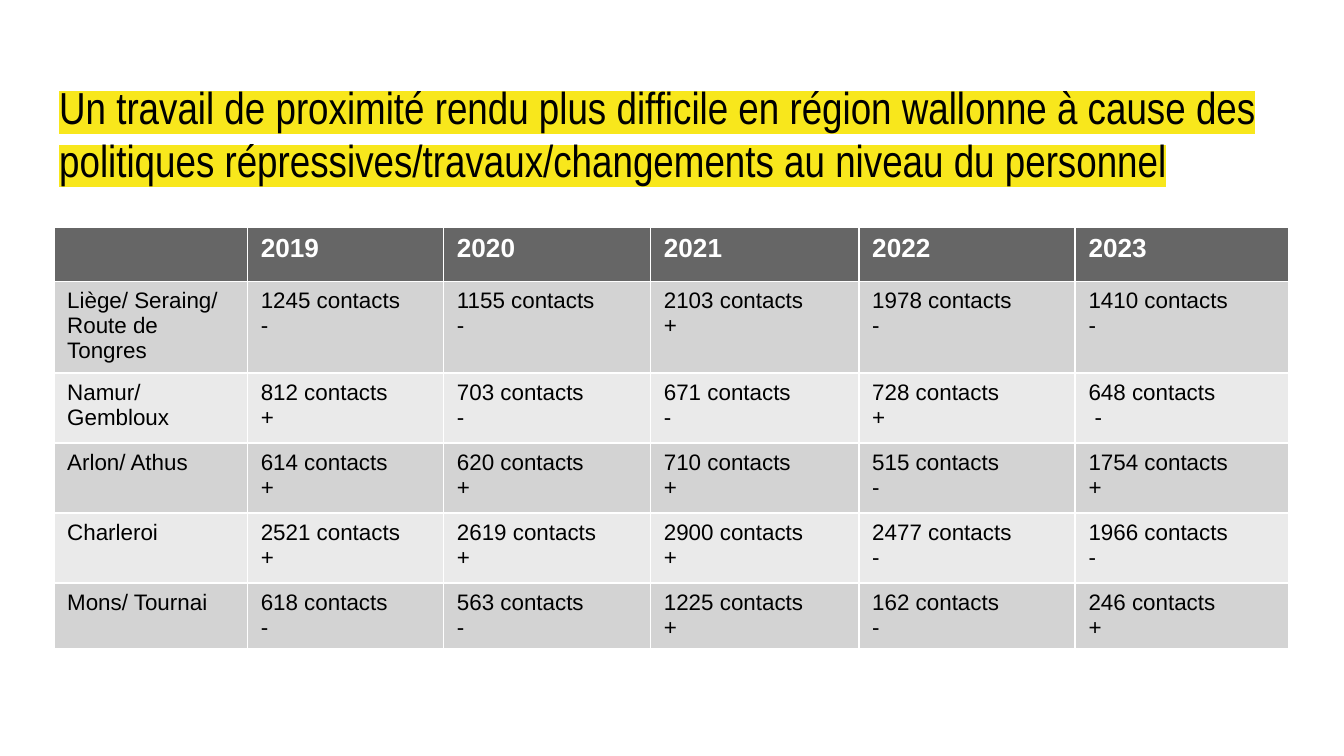
from lxml import etree
from pptx import Presentation
from pptx.dml.color import RGBColor
from pptx.enum.text import MSO_ANCHOR, MSO_AUTO_SIZE, PP_ALIGN
from pptx.oxml.ns import qn
from pptx.util import Pt

TOP = MSO_ANCHOR.TOP
NO_FIT = MSO_AUTO_SIZE.NONE
LEFT = PP_ALIGN.LEFT

TITLE = ("Un travail de proximité rendu plus difficile en région wallonne à cause des "
         "politiques répressives/travaux/changements au niveau du personnel")
YEARS = ["", "2019", "2020", "2021", "2022", "2023"]
CONTACTS = [
    ("Liège/ Seraing/\nRoute de\nTongres",
     [(1245, "-"), (1155, "-"), (2103, "+"), (1978, "-"), (1410, "-")]),
    ("Namur/\nGembloux",
     [(812, "+"), (703, "-"), (671, "-"), (728, "+"), (648, " -")]),
    ("Arlon/ Athus",
     [(614, "+"), (620, "+"), (710, "+"), (515, "-"), (1754, "+")]),
    ("Charleroi",
     [(2521, "+"), (2619, "+"), (2900, "+"), (2477, "-"), (1966, "-")]),
    ("Mons/ Tournai",
     [(618, "-"), (563, "-"), (1225, "+"), (162, "-"), (246, "+")]),
]
COL_WIDTHS = [103.7, 105.1, 110.9, 111.6, 115.9, 114.5]
ROW_HEIGHTS = [23.5, 49, 37.5, 37.5, 37.5, 35.3]
HEADER_FILL = "666666"
BAND_FILLS = ["D3D3D3", "EAEAEA"]


def rgb(value):
    """Turn a hex string into a colour."""
    return RGBColor.from_string(value)


def add_highlight(r, color):
    """Mark a run with a highlight colour."""
    highlight = etree.Element(qn("a:highlight"))
    etree.SubElement(highlight, qn("a:srgbClr"), val=color)
    r.font.fill._xPr.find(qn("a:solidFill")).addnext(highlight)


def write(tf, text, size=12, font="Arial", color="000000", bold=False, highlight=None):
    """Write each line of the text as a formatted paragraph."""
    for i, line in enumerate(text.split("\n")):
        p = tf.add_paragraph() if i else tf.paragraphs[0]
        p.alignment = LEFT
        p.line_spacing = 1.0
        p.space_before = Pt(0)
        r = p.add_run()
        r.text = line
        r.font.size = Pt(size)
        r.font.name = font
        r.font.bold = bold
        r.font.color.rgb = rgb(color)
        if highlight:
            add_highlight(r, highlight)


def format_title(sp):
    """Place the title and fill it with highlighted text."""
    sp.left, sp.top, sp.width, sp.height = Pt(24.5), Pt(35.3), Pt(671), Pt(59.8)
    tf = sp.text_frame
    tf.word_wrap = True
    tf.auto_size = NO_FIT
    tf.vertical_anchor = TOP
    tf.margin_left = tf.margin_top = tf.margin_right = tf.margin_bottom = Pt(7.2)
    write(tf, TITLE, size=24, font="Arial Narrow", highlight="F8E71C")


def fill_row(row, texts, fill, **text_format):
    """Fill one table row with texts on a plain colour."""
    for cell, text in zip(row.cells, texts):
        cell.fill.solid()
        cell.fill.fore_color.rgb = rgb(fill)
        if text:
            write(cell.text_frame, text, **text_format)


def add_contacts_table(s):
    """Add the table of contacts by place and year."""
    table = s.shapes.add_table(len(ROW_HEIGHTS), len(COL_WIDTHS), Pt(28.8), Pt(121.7),
                               Pt(sum(COL_WIDTHS)), Pt(sum(ROW_HEIGHTS))).table
    for column, width in zip(table.columns, COL_WIDTHS):
        column.width = Pt(width)
    for row, height in zip(table.rows, ROW_HEIGHTS):
        row.height = Pt(height)
    fill_row(table.rows[0], YEARS, HEADER_FILL, size=14, color="FFFFFF", bold=True)
    for i, (place, counts) in enumerate(CONTACTS):
        texts = [place] + [f"{count} contacts\n{trend}" for count, trend in counts]
        fill_row(table.rows[i + 1], texts, BAND_FILLS[i % 2])


def main():
    """Build and save the slide."""
    prs = Presentation()
    prs.slide_width, prs.slide_height = Pt(720), Pt(405)
    s = prs.slides.add_slide(prs.slide_layouts[5])
    format_title(s.shapes.title)
    add_contacts_table(s)
    prs.save("out.pptx")


if __name__ == "__main__":
    main()
